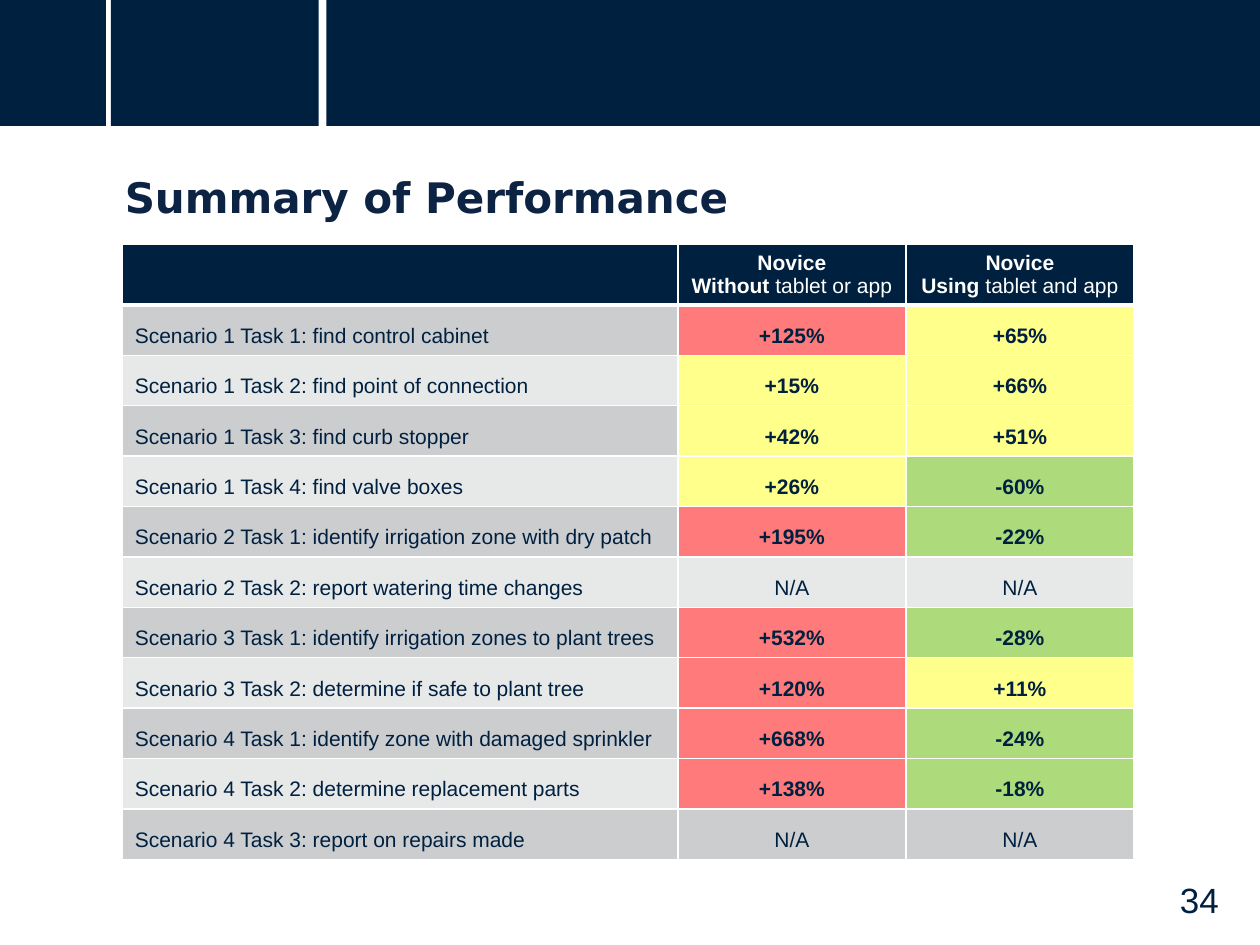
from lxml.etree import SubElement
from pptx import Presentation
from pptx.dml.color import RGBColor
from pptx.enum.shapes import MSO_SHAPE
from pptx.enum.text import MSO_ANCHOR, MSO_AUTO_SIZE, PP_ALIGN
from pptx.oxml import parse_xml
from pptx.oxml.ns import nsdecls, qn
from pptx.util import Inches, Pt

COLORS = {
    "navy": "002040", "title": "0C2344", "white": "FFFFFF",
    "dark": "CCCDCF", "light": "E7E8E8",
    "red": "FF5050", "yellow": "FFFF66", "green": "92D050",
}
SCENARIO_TASKS = [
    ("Scenario 1 Task 1: find control cabinet", ("+125%", "red"), ("+65%", "yellow")),
    ("Scenario 1 Task 2: find point of connection", ("+15%", "yellow"), ("+66%", "yellow")),
    ("Scenario 1 Task 3: find curb stopper", ("+42%", "yellow"), ("+51%", "yellow")),
    ("Scenario 1 Task 4: find valve boxes", ("+26%", "yellow"), ("-60%", "green")),
    ("Scenario 2 Task 1: identify irrigation zone with dry patch", ("+195%", "red"), ("-22%", "green")),
    ("Scenario 2 Task 2: report watering time changes", ("N/A", None), ("N/A", None)),
    ("Scenario 3 Task 1: identify irrigation zones to plant trees", ("+532%", "red"), ("-28%", "green")),
    ("Scenario 3 Task 2: determine if safe to plant tree", ("+120%", "red"), ("+11%", "yellow")),
    ("Scenario 4 Task 1: identify zone with damaged sprinkler", ("+668%", "red"), ("-24%", "green")),
    ("Scenario 4 Task 2: determine replacement parts", ("+138%", "red"), ("-18%", "green")),
    ("Scenario 4 Task 3: report on repairs made", ("N/A", None), ("N/A", None)),
]
HEADINGS = [("Without ", "tablet or app"), ("Using ", "tablet and app")]
COLUMN_WIDTHS = [4.41, 1.81, 1.81]
HEADER_HEIGHT, ROW_HEIGHT = 0.48, 0.4


def add_run(paragraph, text, size, color, bold=False, font="Arial"):
    run = paragraph.add_run()
    run.text = text
    run.font.name, run.font.size, run.font.bold = font, Pt(size), bold
    run.font.color.rgb = RGBColor.from_string(COLORS[color])


def style_cell(cell, color, top=1, bottom=1, opacity=100):
    cell.vertical_anchor = MSO_ANCHOR.MIDDLE
    cell.margin_top = cell.margin_bottom = Inches(0.05)
    cell.fill.solid()
    cell.fill.fore_color.rgb = RGBColor.from_string(COLORS[color])
    properties = cell._tc.get_or_add_tcPr()
    if opacity < 100:
        fill_color = properties.find(".//" + qn("a:srgbClr"))
        SubElement(fill_color, qn("a:alpha"), val=str(opacity * 1000))
    borders = [("L", 1), ("R", 1), ("T", top), ("B", bottom)]
    for position, (side, width) in enumerate(borders):
        properties.insert(position, parse_xml(
            f'<a:ln{side} {nsdecls("a")} w="{Pt(width)}"><a:solidFill>'
            f'<a:srgbClr val="{COLORS["white"]}"/></a:solidFill></a:ln{side}>'))


presentation = Presentation()
presentation.slide_width, presentation.slide_height = Inches(10), Inches(7.5)
slide = presentation.slides.add_slide(presentation.slide_layouts[5])

# Header band in three blocks
for left, right in [(0, 0.84), (0.88, 2.53), (2.59, 10)]:
    block = slide.shapes.add_shape(
        MSO_SHAPE.RECTANGLE, Inches(left), 0, Inches(right - left), Inches(1))
    block.shadow.inherit = False
    block.fill.solid()
    block.fill.fore_color.rgb = RGBColor.from_string(COLORS["navy"])
    block.line.fill.background()

# Title
title = slide.shapes.title
title.left, title.top = Inches(0.89), Inches(1.31)
title.width, title.height = Inches(8.27), Inches(0.59)
frame = title.text_frame
frame.auto_size = MSO_AUTO_SIZE.NONE
frame.vertical_anchor = MSO_ANCHOR.TOP
frame.margin_top = Inches(0.05)
paragraph = frame.paragraphs[0]
paragraph.alignment = PP_ALIGN.LEFT
add_run(paragraph, "Summary of Performance", 24, "title", True, "DejaVu Sans")

# Performance table
row_count = len(SCENARIO_TASKS) + 1
table = slide.shapes.add_table(
    row_count, len(COLUMN_WIDTHS), Inches(0.97), Inches(1.94),
    Inches(sum(COLUMN_WIDTHS)),
    Inches(HEADER_HEIGHT + ROW_HEIGHT * len(SCENARIO_TASKS))).table
for column, width in zip(table.columns, COLUMN_WIDTHS):
    column.width = Inches(width)
for index, row in enumerate(table.rows):
    row.height = Inches(ROW_HEIGHT if index else HEADER_HEIGHT)

# Column headings
for cell in table.rows[0].cells:
    style_cell(cell, "navy", bottom=3)
    cell.margin_left = cell.margin_right = Inches(0.05)
for column_index, (strong, plain) in enumerate(HEADINGS, start=1):
    frame = table.cell(0, column_index).text_frame
    first, second = frame.paragraphs[0], frame.add_paragraph()
    first.alignment = second.alignment = PP_ALIGN.CENTER
    add_run(first, "Novice", 12, "white", True)
    add_run(second, strong, 12, "white", True)
    add_run(second, plain, 12, "white")

# Task rows: banded, with results coloured by rating
for row_index, (task, *results) in enumerate(SCENARIO_TASKS, start=1):
    band = "dark" if row_index % 2 else "light"
    for column_index, (text, rating) in enumerate([(task, None), *results]):
        cell = table.cell(row_index, column_index)
        style_cell(cell, rating or band, top=3 if row_index == 1 else 1,
                   opacity=75 if rating else 100)
        paragraph = cell.text_frame.paragraphs[0]
        paragraph.line_spacing = 1.5
        paragraph.alignment = PP_ALIGN.CENTER if column_index else PP_ALIGN.LEFT
        add_run(paragraph, text, 12, "navy", rating is not None)

# Page number
page_number = slide.shapes.add_textbox(
    Inches(9.25), Inches(6.92), Inches(0.54), Inches(0.44))
paragraph = page_number.text_frame.paragraphs[0]
paragraph.alignment = PP_ALIGN.CENTER
add_run(paragraph, "34", 20, "navy")

presentation.save("out.pptx")
